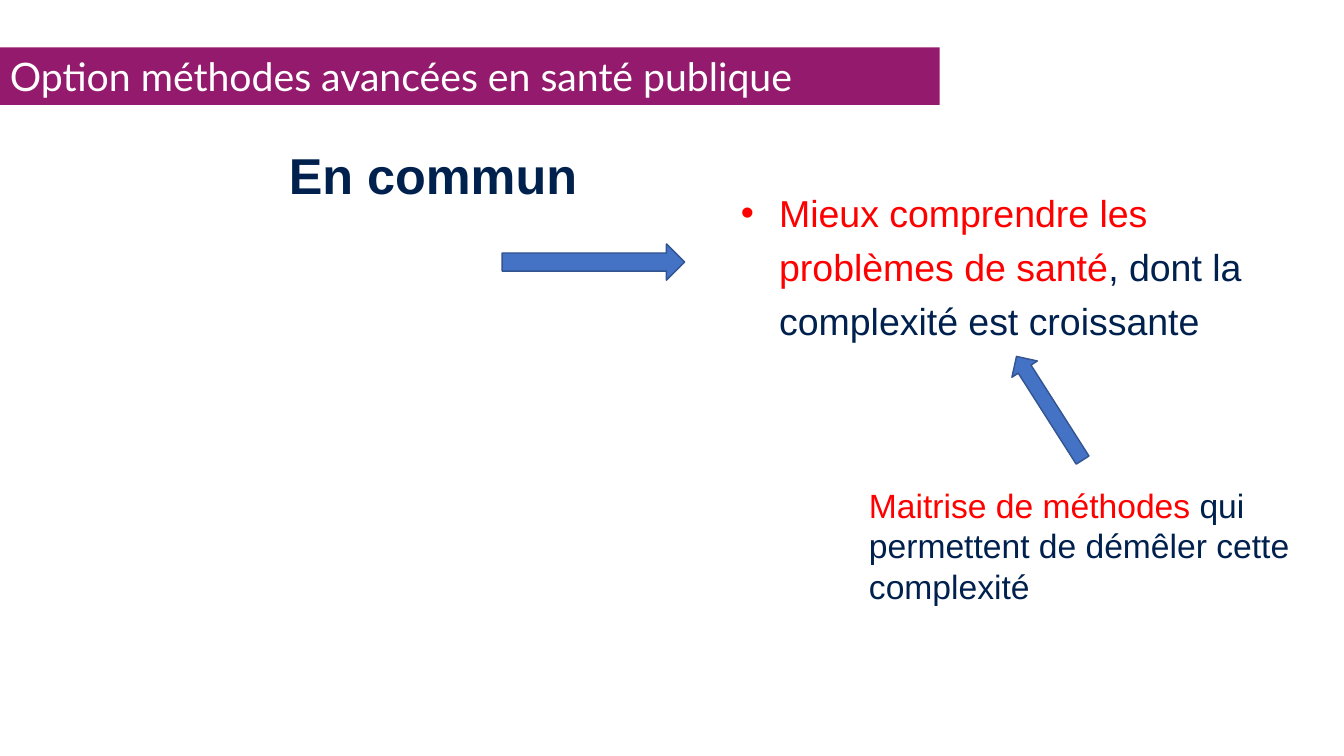
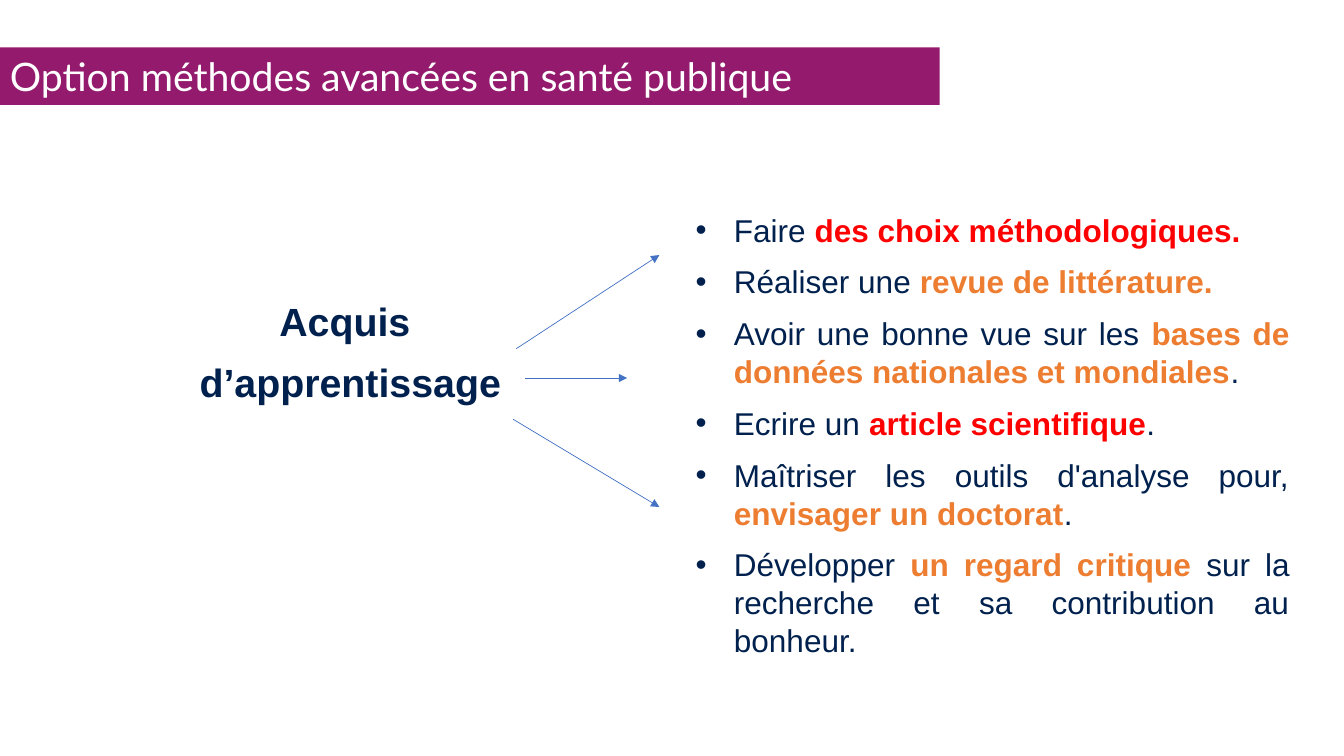
from dataclasses import dataclass

from lxml import etree
from pptx import Presentation
from pptx.dml.color import RGBColor
from pptx.enum import shapes, text
from pptx.oxml import ns
from pptx.util import Inches, Pt


@dataclass(frozen=True)
class Theme:
    navy: RGBColor = RGBColor(0x00, 0x21, 0x4E)
    red: RGBColor = RGBColor(0xFF, 0x00, 0x00)
    orange: RGBColor = RGBColor(0xED, 0x7D, 0x31)
    white: RGBColor = RGBColor(0xFF, 0xFF, 0xFF)
    plum: RGBColor = RGBColor(0x93, 0x1A, 0x6D)
    blue: RGBColor = RGBColor(0x44, 0x72, 0xC4)
    blue_edge: RGBColor = RGBColor(0x32, 0x54, 0x91)
    body_font: str = "Arial"
    title_font: str = "Lato"
    title: float = 28
    heading: float = 36
    side_heading: float = 28.1
    statement: float = 26.8
    note: float = 24
    list_item: float = 22.5
    gap: float = 10


theme = Theme()


def write(shape, paragraphs, size, font=theme.body_font, align=None, bullet=False, spacing=1.0):
    """Fill a shape with paragraphs, each a list of (words, colour, bold)."""
    frame = shape.text_frame
    frame.word_wrap = True
    frame.vertical_anchor = text.MSO_ANCHOR.TOP
    for index, pieces in enumerate(paragraphs):
        paragraph = frame.paragraphs[0] if index == 0 else frame.add_paragraph()
        if bullet:
            properties = paragraph._p.get_or_add_pPr()
            properties.set("marL", str(Inches(0.38)))
            properties.set("indent", str(-Inches(0.38)))
            etree.SubElement(properties, ns.qn("a:buFont"), typeface="Arial")
            etree.SubElement(properties, ns.qn("a:buChar"), char="•")
        paragraph.alignment = align
        paragraph.line_spacing = spacing
        if index:
            paragraph.space_before = Pt(theme.gap)
        for words, colour, bold in pieces:
            run = paragraph.add_run()
            run.text = words
            run.font.name = font
            run.font.size = Pt(size)
            run.font.bold = bold
            run.font.color.rgb = colour


def add_block(slide, kind, left, top, width, height, fill, edge=None):
    block = slide.shapes.add_shape(kind, Inches(left), Inches(top), Inches(width), Inches(height))
    block.shadow.inherit = False
    block.fill.solid()
    block.fill.fore_color.rgb = fill
    if edge is None:
        block.line.fill.background()
    else:
        block.line.color.rgb = edge
        block.line.width = Pt(1)
    return block


deck = Presentation()
deck.slide_width, deck.slide_height = Inches(13.33), Inches(7.5)
common, outcomes = [deck.slides.add_slide(deck.slide_layouts[6]) for _ in range(2)]

for slide in (common, outcomes):
    band = add_block(slide, shapes.MSO_SHAPE.RECTANGLE, 0, 0.47, 9.32, 0.57, theme.plum)
    write(band, [[("Option méthodes avancées en santé publique", theme.white, False)]],
          theme.title, theme.title_font, text.PP_ALIGN.LEFT)

# Slide 1: what the options have in common
heading = common.shapes.add_textbox(Inches(2.52), Inches(1.38), Inches(3.55), Inches(0.8))
write(heading, [[("En commun", theme.navy, True)]], theme.heading, align=text.PP_ALIGN.CENTER)

statement = common.shapes.add_textbox(Inches(7.25), Inches(1.75), Inches(5.34), Inches(1.9))
write(statement, [[("Mieux comprendre les problèmes de santé", theme.red, False),
                   (", dont la complexité est croissante", theme.navy, False)]],
      theme.statement, bullet=True, spacing=1.2)

methods = common.shapes.add_textbox(Inches(8.52), Inches(4.76), Inches(4.52), Inches(1.31))
write(methods, [[("Maitrise de méthodes ", theme.red, False),
                 ("qui permettent de démêler cette complexité", theme.navy, False)]], theme.note)

for left, top, width, height, angle in [(9.8, 3.9, 1.22, 0.3, 237.5), (4.98, 2.42, 1.81, 0.36, 0)]:
    arrow = add_block(common, shapes.MSO_SHAPE.RIGHT_ARROW, left, top, width, height,
                      theme.blue, theme.blue_edge)
    arrow.rotation = angle

# Slide 2: learning outcomes
side_heading = outcomes.shapes.add_textbox(Inches(1.4), Inches(2.9), Inches(4.15), Inches(1.18))
write(side_heading, [[("Acquis ", theme.navy, True)], [("d’apprentissage", theme.navy, True)]],
      theme.side_heading, align=text.PP_ALIGN.CENTER)

skills = [
    ("Faire ", "des choix méthodologiques.", theme.red, ""),
    ("Réaliser une ", "revue de littérature.", theme.orange, ""),
    ("Avoir une bonne vue sur les ", "bases de données nationales et mondiales", theme.orange, "."),
    ("Ecrire un ", "article scientifique", theme.red, "."),
    ("Maîtriser les outils d'analyse pour, ", "envisager un doctorat", theme.orange, "."),
    ("Développer ", "un regard critique", theme.orange,
     " sur la recherche et sa contribution au bonheur."),
]
skill_lines = []
for start, key, colour, end in skills:
    pieces = [(start, theme.navy, False), (key, colour, True)]
    if end:
        pieces.append((end, theme.navy, False))
    skill_lines.append(pieces)
skill_list = outcomes.shapes.add_textbox(Inches(6.8), Inches(2.04), Inches(6.09), Inches(4.74))
write(skill_list, skill_lines, theme.list_item, align=text.PP_ALIGN.JUSTIFY, bullet=True)

for x1, y1, x2, y2 in [(5.12, 3.46, 6.54, 2.53), (5.21, 3.75, 6.22, 3.75), (5.09, 4.16, 6.54, 5.03)]:
    pointer = outcomes.shapes.add_connector(shapes.MSO_CONNECTOR.STRAIGHT,
                                            Inches(x1), Inches(y1), Inches(x2), Inches(y2))
    pointer.line.color.rgb = theme.blue
    pointer.line.width = Pt(0.5)
    etree.SubElement(pointer.line._get_or_add_ln(), ns.qn("a:tailEnd"), type="triangle")
    etree.SubElement(pointer._element.spPr, ns.qn("a:effectLst"))

deck.save("out.pptx")
